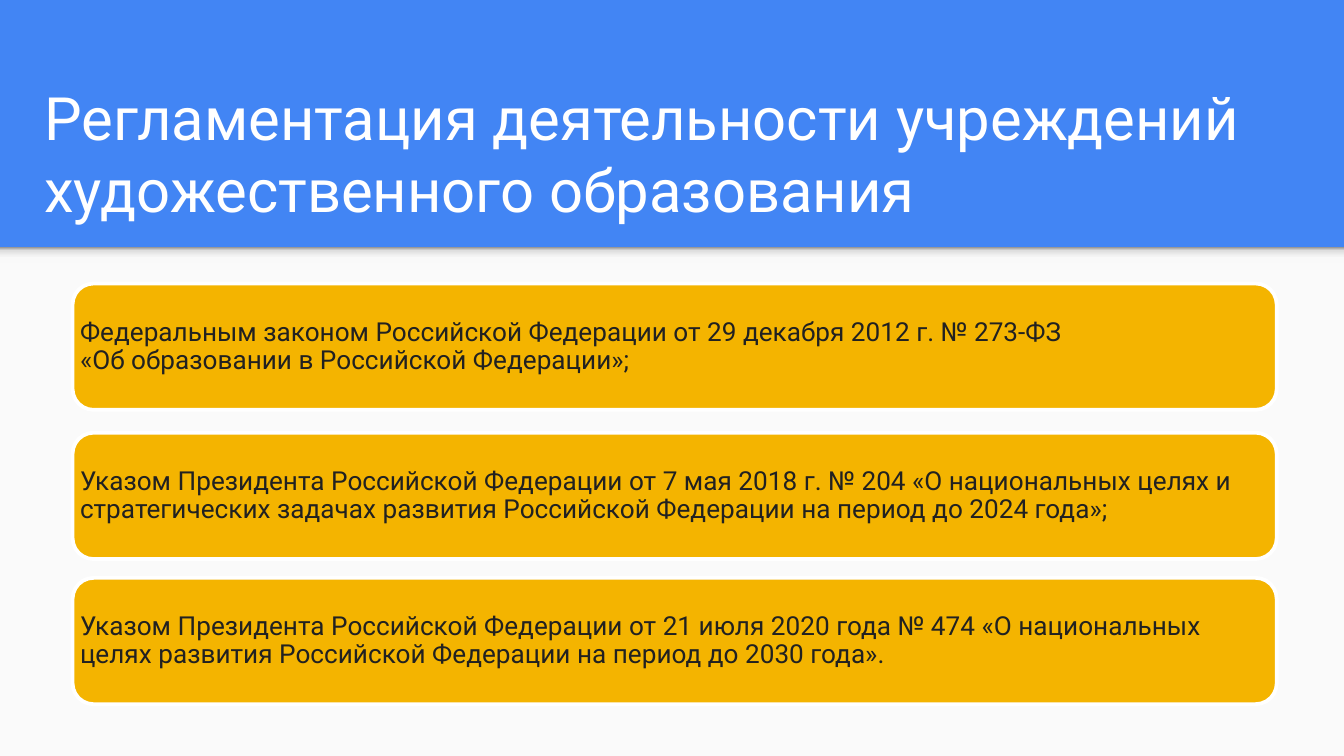
from copy import deepcopy

from pptx import Presentation
from pptx.dml.color import RGBColor
from pptx.enum import shapes, text
from pptx.util import Inches, Pt

BLUE = RGBColor(0x42, 0x85, 0xF4)
PAPER = RGBColor(0xFA, 0xFA, 0xFA)
AMBER = RGBColor(0xF4, 0xB4, 0x00)
WHITE = RGBColor(0xFF, 0xFF, 0xFF)
INK = RGBColor(0x21, 0x21, 0x21)
EDGE_STOPS = [
    (0, RGBColor(0xF9, 0xF9, 0xF9)),
    (0.36, RGBColor(0xF9, 0xF9, 0xF9)),
    (0.8, RGBColor(0xDE, 0xDE, 0xDE)),
    (1, RGBColor(0x99, 0x99, 0x99)),
]

TITLE = "Регламентация деятельности учреждений художественного образования"
LAWS = [
    (2.11, "Федеральным законом Российской Федерации от 29 декабря 2012 г. № 273-ФЗ "
           "\v«Об образовании в Российской Федерации»;"),
    (3.22, "Указом Президента Российской Федерации от 7 мая 2018 г. № 204 «О национальных целях и "
           "стратегических задачах развития Российской Федерации на период до 2024 года»; "),
    (4.3, "Указом Президента Российской Федерации от 21 июля 2020 года № 474 «О национальных "
          "целях развития Российской Федерации на период до 2030 года»."),
]


def add_box(kind, x, y, w, h):
    """Add a preset shape without shadow or outline."""
    sp = s.shapes.add_shape(kind, Inches(x), Inches(y), Inches(w), Inches(h))
    sp.shadow.inherit = False
    sp.line.fill.background()
    return sp


def set_text(sp, content, size, color, anchor, margin):
    tf = sp.text_frame
    tf.text = content
    frame = dict(word_wrap=True, auto_size=text.MSO_AUTO_SIZE.NONE, vertical_anchor=anchor)
    for side in ("left", "top", "right", "bottom"):
        frame[f"margin_{side}"] = Inches(margin)
    for name, value in frame.items():
        setattr(tf, name, value)
    p = tf.paragraphs[0]
    p.alignment = text.PP_ALIGN.LEFT
    for r in p.runs:
        r.font.name = "Roboto"
        r.font.size = Pt(size)
        r.font.color.rgb = color
    return p


prs = Presentation()
prs.slide_width = Inches(10)
prs.slide_height = prs.slide_width * 9 // 16
s = prs.slides.add_slide(prs.slide_layouts[5])
s.background.fill.solid()
s.background.fill.fore_color.rgb = BLUE

# Light page area, down to the slide's bottom, with a shaded upper edge
page = add_box(shapes.MSO_SHAPE.RECTANGLE, 0, 1.84, 10, 3.78)
page.height = prs.slide_height - page.top
page.fill.solid()
page.fill.fore_color.rgb = PAPER

edge = add_box(shapes.MSO_SHAPE.RECTANGLE, 0, 1.84, 10, 0.12)
edge.fill.gradient()
edge.fill.gradient_angle = 90
stop_list = edge.fill._fill._gradFill.gsLst
for _ in range(len(EDGE_STOPS) - len(stop_list)):
    stop_list.append(deepcopy(stop_list[0]))
for stop, (position, color) in zip(edge.fill.gradient_stops, EDGE_STOPS):
    stop.position = position
    stop.color.rgb = color

title = s.shapes.title
title.left, title.top = Inches(0.23), Inches(0.28)
title.width, title.height = Inches(9.48), Inches(1.49)
set_text(title, TITLE, 32, WHITE, text.MSO_ANCHOR.BOTTOM, 0.1)

# One card per law; the rounded corners already inset the text a little
for top, law in LAWS:
    card = add_box(shapes.MSO_SHAPE.ROUNDED_RECTANGLE, 0.54, top, 8.96, 0.94)
    card.fill.solid()
    card.fill.fore_color.rgb = AMBER
    card.line.color.rgb = WHITE
    card.line.width = Pt(2)
    p = set_text(card, law, 14, INK, text.MSO_ANCHOR.MIDDLE, 0.01)
    p.line_spacing = 0.9

prs.save("out.pptx")
